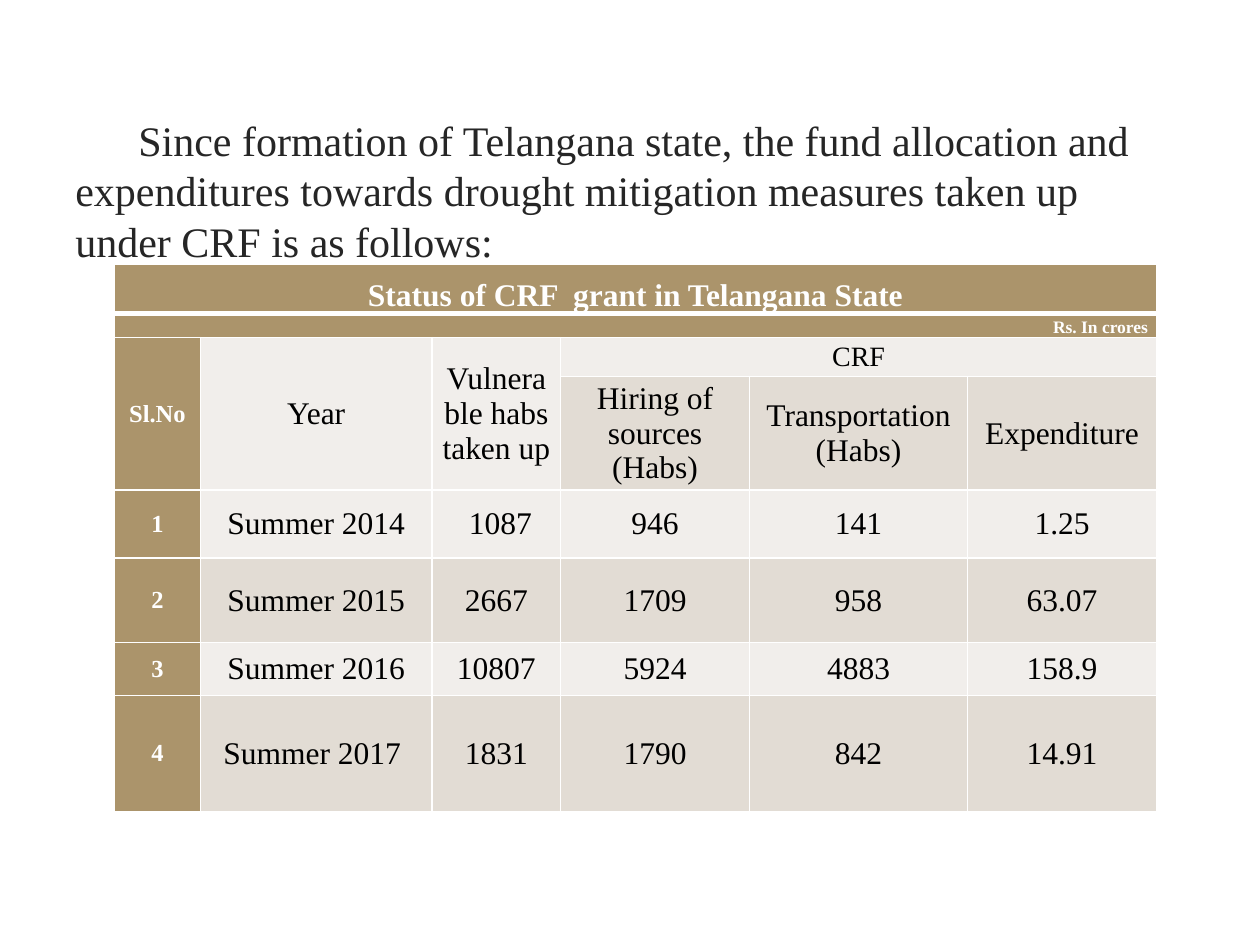
from lxml.etree import SubElement
from pptx import Presentation
from pptx.dml.color import RGBColor
from pptx.enum.text import MSO_ANCHOR as Anchor, PP_ALIGN as Align
from pptx.oxml.ns import qn
from pptx.util import Inches, Pt

FONT = "Times New Roman"
WHITE, BLACK, GREY = "FFFFFF", "000000", "262626"
TAN, LIGHT, DARK = "AB946B", "F1EEEB", "E2DCD4"

INTRO = ("Since formation of Telangana state, the fund allocation and expenditures "
         "towards drought mitigation measures taken up under CRF is as follows:")
ROWS = [
    ["Status of CRF  grant in Telangana State"],
    ["Rs. In crores"],
    ["Sl.No", "Year", "Vulnerable habs taken up", "CRF"],
    ["", "", "", "Hiring of sources (Habs)", "Transportation (Habs)", "Expenditure"],
    ["1", "Summer 2014", " 1087", "946", "141", "1.25"],
    ["2", "Summer 2015", "2667", "1709", "958", "63.07"],
    ["3", "Summer 2016", "10807", "5924", "4883", "158.9"],
    ["4", "Summer 2017 ", "1831", "1790", "842", "14.91"],
]
WIDTHS = [0.68, 1.84, 1.02, 1.5, 1.73, 1.5]
HEIGHTS = [0.39, 0.19, 0.31, 0.81, 0.54, 0.67, 0.42, 0.92]
MERGES = [((0, 0), (0, 5)), ((1, 0), (1, 5)), ((2, 0), (3, 0)),
          ((2, 1), (3, 1)), ((2, 2), (3, 2)), ((2, 3), (2, 5))]
SIZES = {(0, 0): 18, (1, 0): 10, (2, 3): 16}


def color(value):
    return RGBColor.from_string(value)


def style(paragraph, size, ink, bold=False):
    for span in paragraph.runs:
        span.font.name = FONT
        span.font.size = Pt(size)
        span.font.bold = bold
        span.font.color.rgb = color(ink)


def add_borders(cell, row):
    properties = cell._tc.get_or_add_tcPr()
    thick = {0: "lnB", 1: "lnT"}.get(row)
    for index, side in enumerate(("lnL", "lnR", "lnT", "lnB")):
        line = properties.makeelement(qn(f"a:{side}"), {"w": str(Pt(3 if side == thick else 1))})
        fill = SubElement(line, qn("a:solidFill"))
        SubElement(fill, qn("a:srgbClr"), val=WHITE)
        properties.insert(index, line)


def format_cell(cell, row, column):
    heading = row < 2 or column == 0
    banded = LIGHT if row % 2 == 0 else DARK
    cell.fill.solid()
    cell.fill.fore_color.rgb = color(TAN if heading else banded)
    add_borders(cell, row)
    cell.margin_left = cell.margin_right = Inches(0.07)
    cell.margin_top = cell.margin_bottom = 0
    cell.vertical_anchor = Anchor.BOTTOM if row < 2 else Anchor.MIDDLE
    para = cell.text_frame.paragraphs[0]
    para.alignment = Align.RIGHT if row == 1 else Align.CENTER
    size = SIZES.get((row, column), 14 if column == 0 else 18)
    style(para, size, WHITE if heading else BLACK, heading)


deck = Presentation()
deck.slide_width, deck.slide_height = Inches(10), Inches(7.5)
page = deck.slides.add_slide(deck.slide_layouts[6])

box = page.shapes.add_textbox(Inches(0.5), Inches(0.86), Inches(9), Inches(5.84))
box.text_frame.word_wrap = True
box.text_frame.margin_right = Inches(0.25)
para = box.text_frame.paragraphs[0]
para.text = INTRO
para._p.get_or_add_pPr().set("indent", str(Inches(0.5)))
style(para, 24, GREY)

frame = page.shapes.add_table(len(ROWS), len(WIDTHS), Inches(0.91), Inches(2.1),
                              Inches(sum(WIDTHS)), Inches(sum(HEIGHTS)))
table = frame.table
for column, width in zip(table.columns, WIDTHS):
    column.width = Inches(width)
for row, height in zip(table.rows, HEIGHTS):
    row.height = Inches(height)
for first, last in MERGES:
    table.cell(*first).merge(table.cell(*last))
for row, texts in enumerate(ROWS):
    for column in range(len(WIDTHS)):
        cell = table.cell(row, column)
        if column < len(texts) and texts[column]:
            cell.text_frame.text = texts[column]
        format_cell(cell, row, column)

deck.save("out.pptx")
